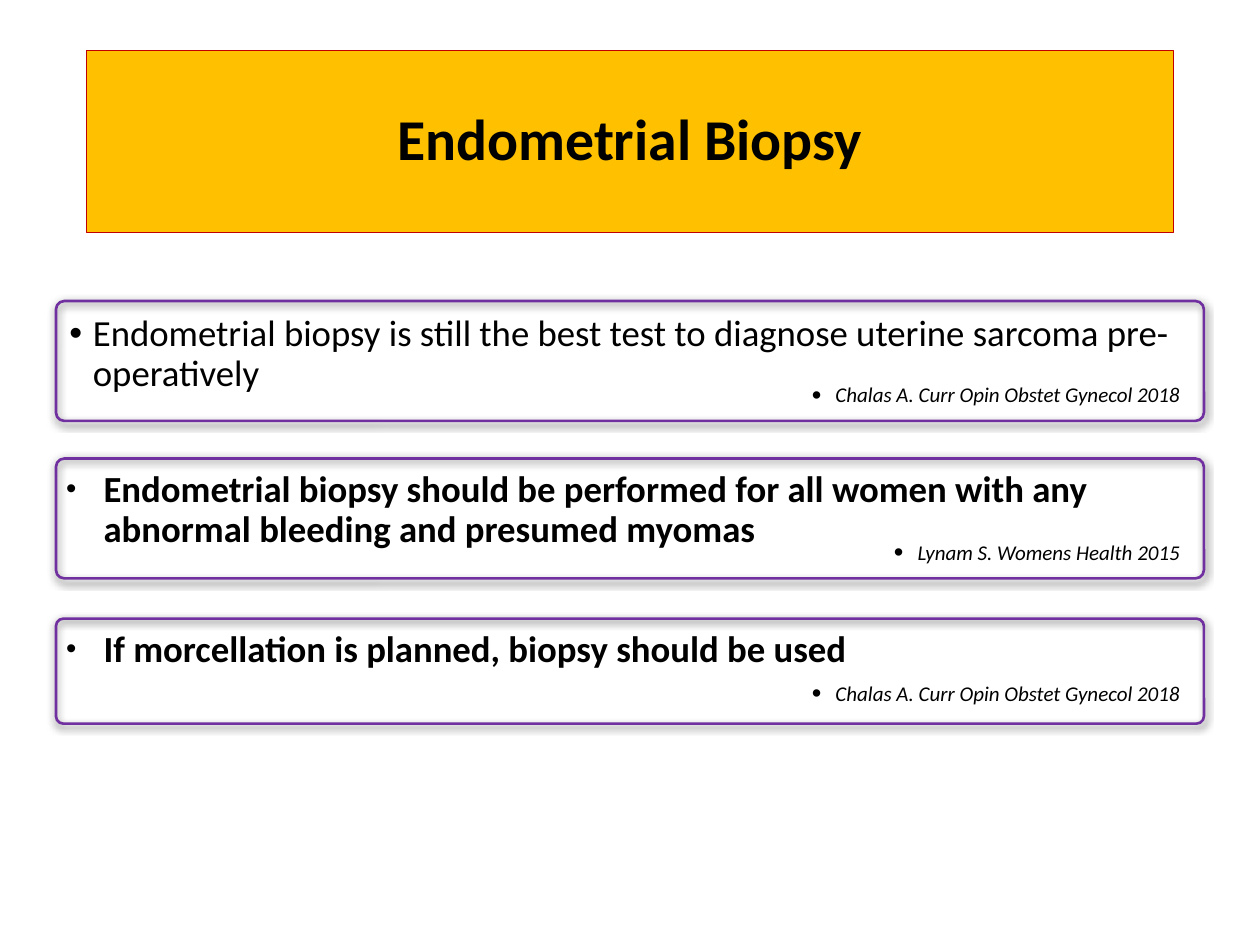
from collections import namedtuple
from dataclasses import dataclass

from lxml import etree
from pptx import Presentation
from pptx.dml.color import RGBColor
from pptx.enum.shapes import MSO_SHAPE
from pptx.enum.text import MSO_ANCHOR, MSO_AUTO_SIZE, PP_ALIGN
from pptx.oxml.ns import qn
from pptx.util import Pt

ROUNDED = MSO_SHAPE.ROUNDED_RECTANGLE
TOP, MIDDLE, BOTTOM = MSO_ANCHOR.TOP, MSO_ANCHOR.MIDDLE, MSO_ANCHOR.BOTTOM
LEFT, CENTER, RIGHT = PP_ALIGN.LEFT, PP_ALIGN.CENTER, PP_ALIGN.RIGHT
NO_FIT = MSO_AUTO_SIZE.NONE

Box = namedtuple("Box", "left top width height")
Card = namedtuple("Card", "top height citation_gap statement citation")


@dataclass(frozen=True)
class Theme:
    font: str = "Calibri"
    ink: RGBColor = RGBColor(0, 0, 0)
    banner: RGBColor = RGBColor(0xFF, 0xC0, 0x00)
    banner_line: RGBColor = RGBColor(0xC0, 0x00, 0x00)
    frame_line: RGBColor = RGBColor(0x70, 0x30, 0xA0)
    title_size: int = 33
    statement_size: int = 21
    citation_size: int = 12


THEME = Theme()
CARDS = [
    Card(172, 68.5, 4.3,
         "Endometrial biopsy is still the best test to diagnose uterine sarcoma pre-operatively",
         "Chalas A. Curr Opin Obstet Gynecol 2018"),
    Card(262, 68.5, 4.3,
         "Endometrial biopsy should be performed for all women with any abnormal bleeding "
         "and presumed myomas",
         "Lynam S. Womens Health 2015"),
    Card(353.5, 60, 6.5,
         "If morcellation is planned, biopsy should be used",
         "Chalas A. Curr Opin Obstet Gynecol 2018"),
]


def place(shape, box):
    shape.left, shape.top, shape.width, shape.height = map(Pt, box)


def write(shape, text, size, bold=False, italic=False, align=LEFT, anchor=TOP, spacing=1.0):
    frame = shape.text_frame
    frame.text = text
    frame.word_wrap = True
    frame.auto_size = NO_FIT
    frame.vertical_anchor = anchor
    para = frame.paragraphs[0]
    para.alignment = align
    para.line_spacing = spacing
    para.space_before = Pt(0)
    font = para.runs[0].font
    font.name, font.size = THEME.font, Pt(size)
    font.bold, font.italic = bold, italic
    font.color.rgb = THEME.ink
    return para


def add_bullet(para, indent, percent=100):
    props = para._p.get_or_add_pPr()
    props.set("marL", str(Pt(indent)))
    props.set("indent", str(-Pt(indent)))
    etree.SubElement(props, qn("a:buSzPct")).set("val", str(percent * 1000))
    etree.SubElement(props, qn("a:buFont")).set("typeface", "Arial")
    etree.SubElement(props, qn("a:buChar")).set("char", "•")


def add_soft_shadow(shape):
    effects = etree.SubElement(shape._element.spPr, qn("a:effectLst"))
    shadow = etree.SubElement(effects, qn("a:outerShdw"), blurRad=str(Pt(4.5)),
                              dist=str(Pt(1.5)), dir="5400000", rotWithShape="0")
    color = etree.SubElement(shadow, qn("a:srgbClr"), val=str(THEME.ink))
    etree.SubElement(color, qn("a:alpha"), val="63000")


def build_banner(title, box):
    place(title, box)
    title.fill.solid()
    title.fill.fore_color.rgb = THEME.banner
    title.line.color.rgb = THEME.banner_line
    title.line.width = Pt(0.75)
    write(title, "Endometrial Biopsy", THEME.title_size, bold=True,
          align=CENTER, anchor=MIDDLE, spacing=0.9)


def build_card(page, box, card, body=None):
    """Place a framed statement and its citation; the lead card uses the body placeholder."""
    statement = body or page.shapes.add_textbox(0, 0, 0, 0)
    place(statement, Box(box.left + 0.4, box.top + 4.3, box.width, 68.5))
    para = write(statement, card.statement, THEME.statement_size,
                 bold=body is None, spacing=0.9)
    if body is None:
        frame = statement.text_frame
        frame.margin_left = frame.margin_right = Pt(5.4)
        frame.margin_top = frame.margin_bottom = Pt(2.7)
        add_bullet(para, 21.4, 80)
    else:
        add_bullet(para, 13.5)

    citation = page.shapes.add_textbox(0, 0, 0, 0)
    place(citation, Box(box.left + 249.5, box.top + box.height - card.citation_gap - 21, 400, 21))
    para = write(citation, card.citation, THEME.citation_size, italic=True,
                 align=RIGHT, anchor=BOTTOM)
    add_bullet(para, 13.5, 130)

    outline = page.shapes.add_shape(ROUNDED, *map(Pt, box))
    outline.adjustments[0] = 0.07
    outline.fill.background()
    outline.line.color.rgb = THEME.frame_line
    outline.line.width = Pt(1.5)
    add_soft_shadow(outline)


def main():
    deck = Presentation()
    deck.slide_width, deck.slide_height = Pt(720), Pt(540)
    page = deck.slides.add_slide(deck.slide_layouts[1])
    build_banner(page.shapes.title, Box(49.5, 29, 621, 104))
    body = page.placeholders[1]
    for card in CARDS:
        build_card(page, Box(32, card.top, 656, card.height), card, body)
        body = None
    deck.save("out.pptx")


if __name__ == "__main__":
    main()
